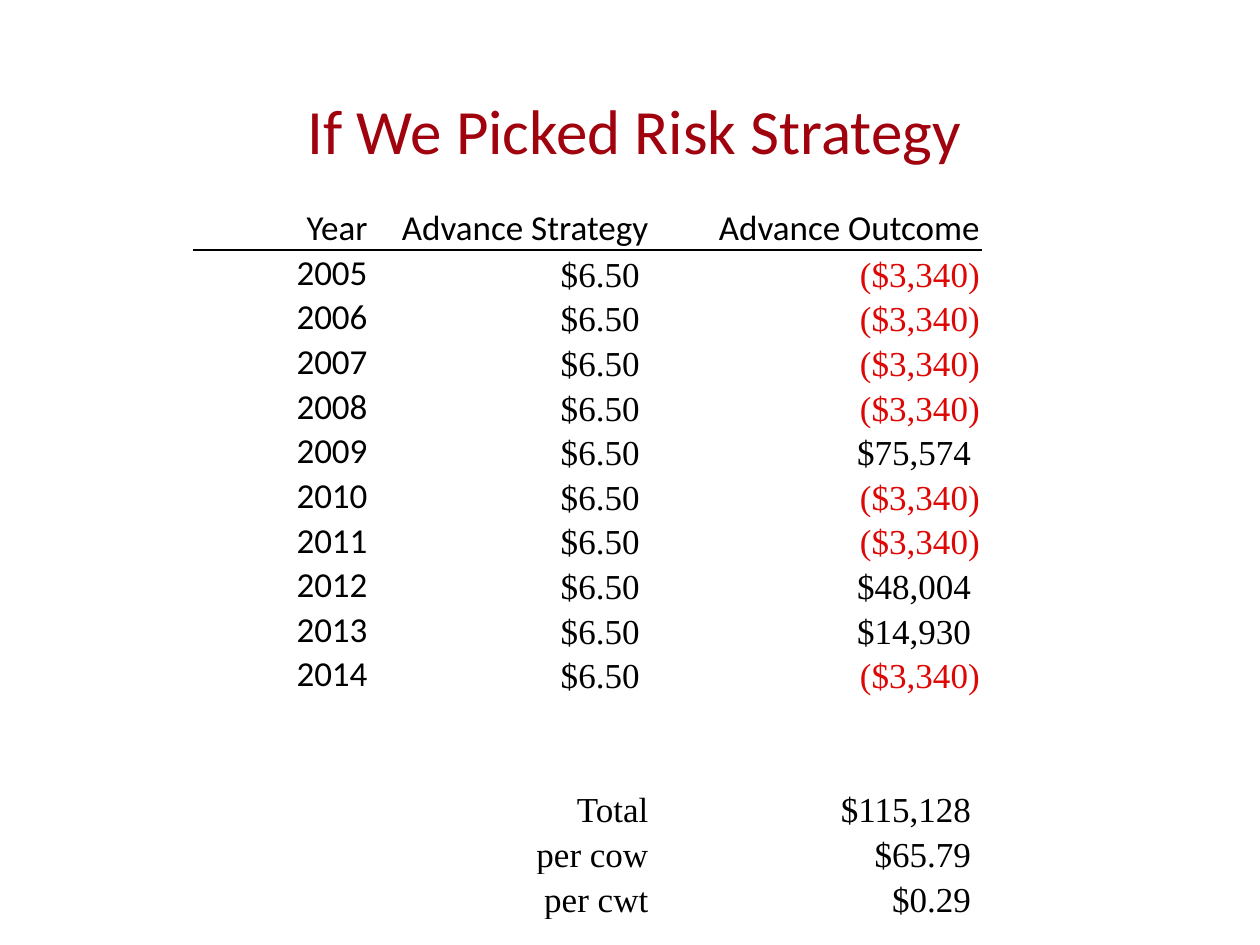
"""Build a slide tabulating the yearly outcome of the risk strategy."""
from dataclasses import dataclass

from lxml import etree
from pptx import Presentation
from pptx.dml.color import RGBColor
from pptx.enum.text import MSO_ANCHOR, PP_ALIGN
from pptx.oxml.ns import qn
from pptx.slide import Slide
from pptx.table import Table, _Cell
from pptx.text.text import TextFrame
from pptx.util import Cm, Pt

CENTER, RIGHT = PP_ALIGN.CENTER, PP_ALIGN.RIGHT
MIDDLE, BOTTOM = MSO_ANCHOR.MIDDLE, MSO_ANCHOR.BOTTOM
BLACK = RGBColor(0x00, 0x00, 0x00)
CRIMSON = RGBColor(0xA0, 0x02, 0x0E)
LOSS_RED = RGBColor(0xDD, 0x08, 0x06)
SANS, SERIF = "Calibri", "Times New Roman"

COLUMN_WIDTHS = (Cm(3.53), Cm(5.66), Cm(6.68))
ROW_HEIGHT = Cm(0.9)
INSET = Cm(0.03)
HEADERS = ("Year", "Advance Strategy", "Advance Outcome")
FIRST_YEAR, LAST_YEAR = 2005, 2014
STRATEGY, LOSS = "$6.50 ", "($3,340)"
GAINS = {2009: "$75,574 ", 2012: "$48,004 ", 2013: "$14,930 "}
SUMMARY = (("Total", "$115,128 "), ("per cow", "$65.79 "), ("per cwt", "$0.29 "))


@dataclass(frozen=True)
class Entry:
    """Text of one table cell with its look."""

    text: str = ""
    font: str = SERIF
    color: RGBColor = BLACK


def add_text(tf: TextFrame, entry: Entry, size: int, align: PP_ALIGN) -> None:
    """Write one aligned run into a text frame."""
    p = tf.paragraphs[0]
    p.alignment = align
    p.font.size = Pt(size)
    if entry.text:
        r = p.add_run()
        r.text = entry.text
        r.font.size = Pt(size)
        r.font.name = entry.font
        r.font.color.rgb = entry.color


def add_border(cell: _Cell, side: str) -> None:
    """Draw a thin black border on one side (lnT or lnB) of a cell."""
    ln = etree.Element(qn(f"a:{side}"), w=str(Pt(1)))
    fill = etree.SubElement(ln, qn("a:solidFill"))
    etree.SubElement(fill, qn("a:srgbClr"), val=str(BLACK))
    cell._tc.get_or_add_tcPr().insert(0, ln)


def fill_cell(cell: _Cell, entry: Entry) -> None:
    """Lay out a cell without fill and write its entry."""
    cell.margin_left = cell.margin_right = cell.margin_top = INSET
    cell.margin_bottom = Cm(0)
    cell.vertical_anchor = BOTTOM
    cell.fill.background()
    add_text(cell.text_frame, entry, 20, RIGHT)


def table_rows() -> list[tuple[Entry, ...]]:
    """Return the header, yearly, spacer and summary rows."""
    rows = [tuple(Entry(text, SANS) for text in HEADERS)]
    for year in range(FIRST_YEAR, LAST_YEAR + 1):
        outcome = Entry(GAINS[year]) if year in GAINS else Entry(LOSS, color=LOSS_RED)
        rows.append((Entry(str(year), SANS), Entry(STRATEGY), outcome))
    rows += [(Entry(),) * len(HEADERS)] * 2
    rows += [(Entry(), Entry(label), Entry(value)) for label, value in SUMMARY]
    return rows


def add_outcome_table(s: Slide, rows: list[tuple[Entry, ...]]) -> Table:
    """Add the table of outcomes with a rule under its header."""
    table = s.shapes.add_table(
        len(rows), len(HEADERS), Cm(3.91), Cm(4.14),
        sum(COLUMN_WIDTHS), ROW_HEIGHT * len(rows),
    ).table
    table.first_row = table.horz_banding = False
    for column, width in zip(table.columns, COLUMN_WIDTHS):
        column.width = width
    for i, entries in enumerate(rows):
        table.rows[i].height = ROW_HEIGHT
        for j, entry in enumerate(entries):
            fill_cell(table.cell(i, j), entry)
    for j in range(len(HEADERS)):
        add_border(table.cell(0, j), "lnB")
        add_border(table.cell(1, j), "lnT")
    return table


def add_title(s: Slide, text: str) -> None:
    """Add the centred slide title."""
    tf = s.shapes.add_textbox(Cm(0.61), Cm(1.4), Cm(24.36), Cm(2.41)).text_frame
    tf.word_wrap = True
    tf.vertical_anchor = MIDDLE
    add_text(tf, Entry(text, SANS, CRIMSON), 36, CENTER)


def main() -> None:
    """Build and save the presentation."""
    prs = Presentation()
    prs.slide_width, prs.slide_height = Cm(25.4), Cm(19.05)
    s = prs.slides.add_slide(prs.slide_layouts[6])
    add_title(s, "If We Picked Risk Strategy")
    add_outcome_table(s, table_rows())
    prs.save("out.pptx")


if __name__ == "__main__":
    main()
